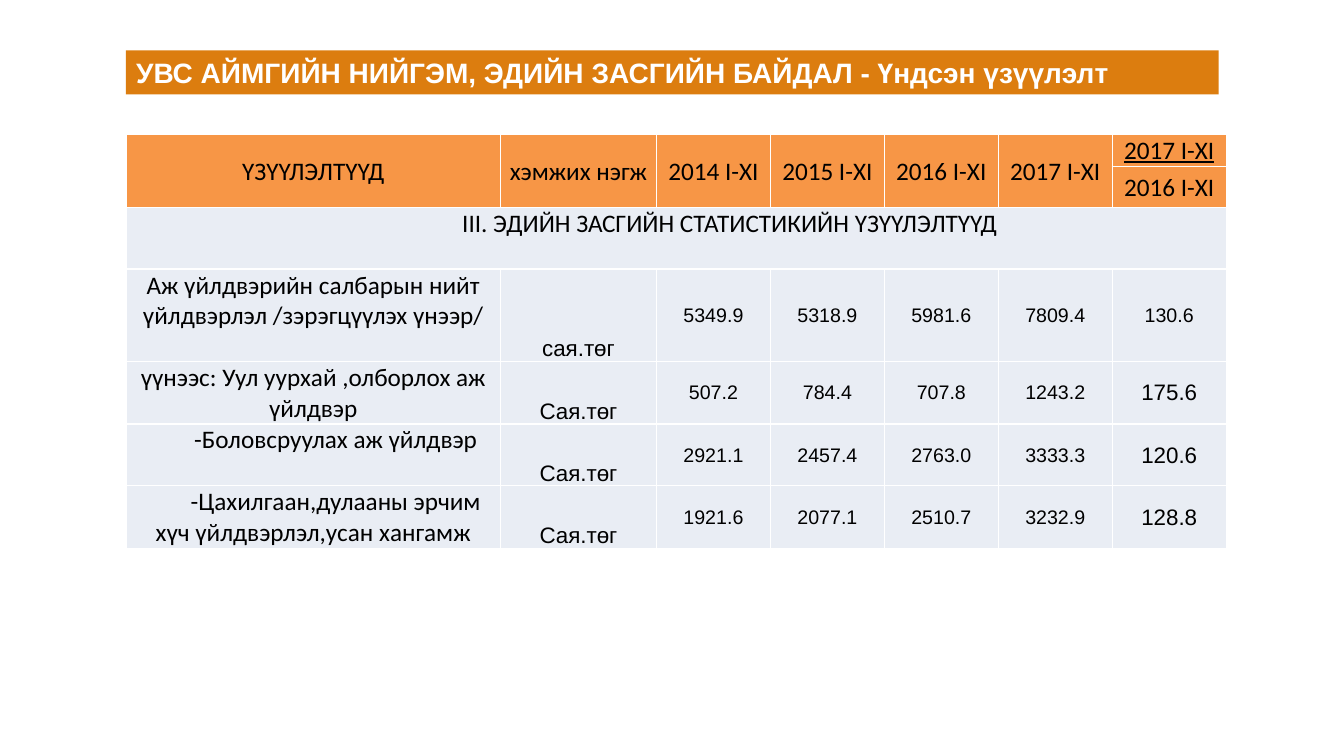
from dataclasses import dataclass
from lxml.etree import SubElement
from pptx import Presentation
from pptx.dml.color import RGBColor
from pptx.enum.text import MSO_ANCHOR, MSO_AUTO_SIZE, PP_ALIGN
from pptx.oxml import parse_xml
from pptx.oxml.ns import nsdecls, qn
from pptx.util import Pt


@dataclass(frozen=True)
class Theme:
    bar: str = "DC7D0F"
    header: str = "F79646"
    body: str = "E9EDF4"
    white: str = "FFFFFF"
    black: str = "000000"
    title_size: int = 20
    label_size: int = 18
    unit_size: int = 16
    number_size: int = 14
    label_font: str = "Calibri"
    number_font: str = "Arial"


T = Theme()


def write(tf, text, size=T.label_size, font=T.label_font, color=T.black, bold=False,
          underline=False, align=PP_ALIGN.CENTER, left=0, indent=0):
    p = tf.paragraphs[0]
    p.alignment = align
    p.space_before = Pt(0)
    pPr = p._p.get_or_add_pPr()
    pPr.set("marL", str(Pt(left)))
    pPr.set("indent", str(Pt(indent)))
    r = p.add_run()
    r.text = text
    r.font.size, r.font.name = Pt(size), font
    r.font.bold, r.font.underline = bold, underline
    r.font.color.rgb = RGBColor.from_string(color)


def style_cell(cell, fill):
    """Set the margins, fill and white borders of a cell."""
    cell.margin_left = cell.margin_right = cell.margin_top = Pt(0.7)
    cell.margin_bottom = 0
    cell.fill.solid()
    cell.fill.fore_color.rgb = RGBColor.from_string(fill)
    tcPr = cell._tc.get_or_add_tcPr()
    for i, side in enumerate(("lnL", "lnR", "lnT", "lnB")):
        ln = parse_xml(f'<a:{side} {nsdecls("a")} w="{Pt(1)}"/>')
        SubElement(SubElement(ln, qn("a:solidFill")), qn("a:srgbClr"), val=T.white)
        tcPr.insert(i, ln)


prs = Presentation()
prs.slide_width, prs.slide_height = Pt(960), Pt(540)
s = prs.slides.add_slide(prs.slide_layouts[5])

title = s.shapes.title
title.left, title.top, title.width, title.height = Pt(90), Pt(36), Pt(780.5), Pt(31.5)
title.fill.solid()
title.fill.fore_color.rgb = RGBColor.from_string(T.bar)
tf = title.text_frame
tf.word_wrap = True
tf.auto_size = MSO_AUTO_SIZE.NONE
tf.vertical_anchor = MSO_ANCHOR.MIDDLE
write(tf, "УВС АЙМГИЙН НИЙГЭМ, ЭДИЙН ЗАСГИЙН БАЙДАЛ - Үндсэн үзүүлэлт",
      size=T.title_size, font=T.number_font, color=T.white, bold=True,
      align=PP_ALIGN.JUSTIFY)

headings = ["ҮЗҮҮЛЭЛТҮҮД", "хэмжих нэгж", "2014 I-XI", "2015 I-XI", "2016 I-XI", "2017 I-XI"]
# label, first-line indent, label anchor, unit, yearly values, ratio, ratio size
indicators = [
    ("Аж үйлдвэрийн салбарын нийт үйлдвэрлэл /зэрэгцүүлэх үнээр/", 0, MSO_ANCHOR.TOP, "сая.төг",
     ["5349.9", "5318.9", "5981.6", "7809.4"], "130.6", T.number_size),
    ("үүнээс: Уул уурхай ,олборлох аж үйлдвэр", 0, MSO_ANCHOR.BOTTOM, "Сая.төг",
     ["507.2", "784.4", "707.8", "1243.2"], "175.6", T.unit_size),
    ("-Боловсруулах аж үйлдвэр", 32, MSO_ANCHOR.TOP, "Сая.төг",
     ["2921.1", "2457.4", "2763.0", "3333.3"], "120.6", T.unit_size),
    ("-Цахилгаан,дулааны эрчим хүч үйлдвэрлэл,усан хангамж", 32, MSO_ANCHOR.BOTTOM, "Сая.төг",
     ["1921.6", "2077.1", "2510.7", "3232.9"], "128.8", T.unit_size),
]
widths = [267.5, 111.5] + [81.4] * 5
heights = [22.8, 29.4, 44, 66, 44.2, 44.2, 44.2]

table = s.shapes.add_table(len(heights), len(widths), Pt(90), Pt(96),
                           Pt(sum(widths)), Pt(sum(heights))).table
table.first_row = table.horz_banding = False
for col, width in zip(table.columns, widths):
    col.width = Pt(width)
for i, (row, height) in enumerate(zip(table.rows, heights)):
    row.height = Pt(height)
    for cell in row.cells:
        style_cell(cell, T.header if i < 2 else T.body)
        cell.vertical_anchor = MSO_ANCHOR.MIDDLE

for c, heading in enumerate(headings):
    table.cell(0, c).merge(table.cell(1, c))
    write(table.cell(0, c).text_frame, heading)
write(table.cell(0, 6).text_frame, "2017 I-XI", underline=True)
write(table.cell(1, 6).text_frame, "2016 I-XI")

section = table.cell(2, 0)
section.merge(table.cell(2, 6))
section.vertical_anchor = MSO_ANCHOR.TOP
write(section.text_frame, "III. ЭДИЙН ЗАСГИЙН СТАТИСТИКИЙН ҮЗҮҮЛЭЛТҮҮД",
      align=PP_ALIGN.LEFT, left=239.5)

for i, (label, indent, anchor, unit, values, ratio, ratio_size) in enumerate(indicators, start=3):
    cells = list(table.rows[i].cells)
    cells[0].vertical_anchor = anchor
    cells[1].vertical_anchor = MSO_ANCHOR.BOTTOM
    write(cells[0].text_frame, label, indent=indent)
    write(cells[1].text_frame, unit, size=T.unit_size, font=T.number_font)
    for cell, value in zip(cells[2:6], values):
        write(cell.text_frame, value, size=T.number_size, font=T.number_font)
    write(cells[6].text_frame, ratio, size=ratio_size, font=T.number_font)

prs.save("out.pptx")
